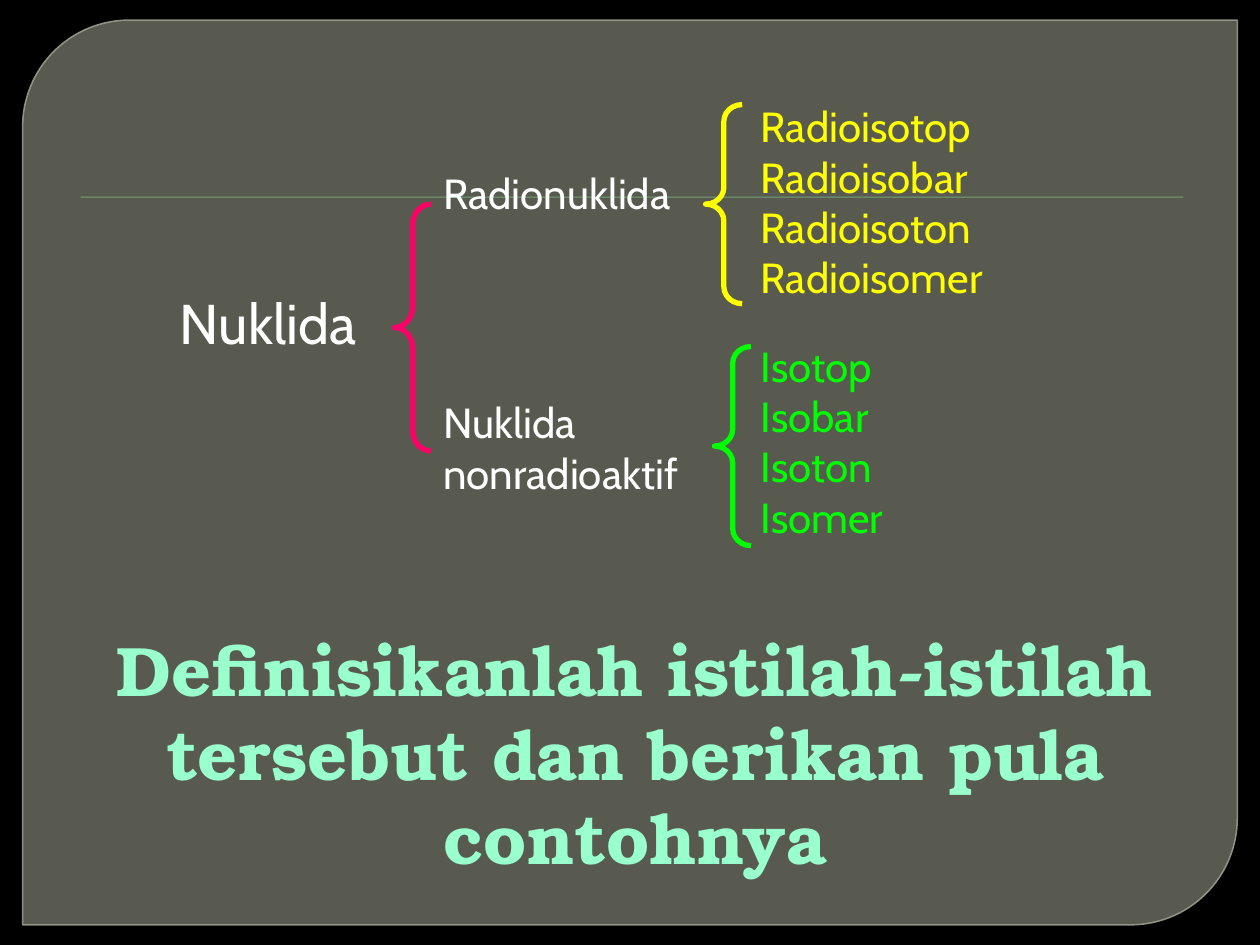
from lxml.etree import SubElement
from pptx import Presentation
from pptx.dml.color import RGBColor
from pptx.enum.shapes import MSO_SHAPE as Preset
from pptx.enum.text import MSO_ANCHOR as Anchor, MSO_AUTO_SIZE as AutoSize, PP_ALIGN as Align
from pptx.oxml.ns import qn
from pptx.util import Inches, Pt

BLACK = RGBColor(0x00, 0x00, 0x00)
WHITE = RGBColor(0xFF, 0xFF, 0xFF)
PANEL = RGBColor(0x88, 0x8B, 0x7B)
PANEL_EDGE = RGBColor(0x9D, 0xA0, 0x90)
RULE = RGBColor(0x72, 0xA3, 0x76)
PINK = RGBColor(0xFF, 0x00, 0x66)
YELLOW = RGBColor(0xFF, 0xFF, 0x00)
GREEN = RGBColor(0x00, 0xFF, 0x00)
MINT = RGBColor(0x99, 0xFF, 0xCC)

deck = Presentation()
deck.slide_width, deck.slide_height = Inches(10), Inches(7.5)
page = deck.slides.add_slide(deck.slide_layouts[5])
page.background.fill.solid()
page.background.fill.fore_color.rgb = BLACK


def share(left, top, width, height):
    """Turn percentages of the slide into left, top, width and height."""
    column, row = deck.slide_width / 100, deck.slide_height / 100
    return int(left * column), int(top * row), int(width * column), int(height * row)


def write(box, text, size=24, font="Cabin", color=WHITE, bold=False, align=Align.LEFT):
    frame = box.text_frame
    frame.word_wrap = True
    frame.auto_size = AutoSize.NONE
    frame.vertical_anchor = Anchor.TOP
    para = frame.paragraphs[0]
    para.alignment = align
    span = para.add_run()
    span.text = text
    span.font.size = Pt(size)
    span.font.name = font
    span.font.bold = bold
    span.font.color.rgb = color


# Backdrop: translucent panel and thin rule
panel = page.shapes.add_shape(Preset.ROUND_2_DIAG_RECTANGLE, *share(1.8, 2.13, 96.4, 95.73))
panel.shadow.inherit = False
panel.adjustments[0], panel.adjustments[1] = 0.118, 0
panel.fill.solid()
panel.fill.fore_color.rgb = PANEL
panel.line.color.rgb = PANEL_EDGE
panel.line.width = Pt(0.87)
fill_color, edge_color = panel.element.spPr.iter(qn("a:srgbClr"))
for color, opacity in ((fill_color, 65), (edge_color, 88)):
    SubElement(color, qn("a:alpha"), val=str(opacity * 1000))

rule = page.shapes.add_shape(Preset.RECTANGLE, *share(6.4, 20.8, 87.5, 0.13))
rule.shadow.inherit = False
rule.fill.solid()
rule.fill.fore_color.rgb = RULE
rule.line.fill.background()

# Tree of nuclide classes
labels = (
    ("Nuklida", (13.3, 29.87, 18, 12.4), 32, WHITE),
    ("Radionuklida", (34.2, 17.07, 23.3, 12.4), 24, WHITE),
    ("Nuklida nonradioaktif", (34.2, 41.33, 24.1, 16.53), 24, WHITE),
    ("Radioisotop Radioisobar Radioisoton Radioisomer", (59.4, 10, 22.3, 24.4), 24, YELLOW),
    ("Isotop Isobar Isoton Isomer", (59.4, 35.33, 16.5, 24.67), 24, GREEN),
)
for text, place, size, color in labels:
    write(page.shapes.add_textbox(*share(*place)), text, size=size, color=color)

braces = (
    ((31.3, 21.6, 2.9, 26.13), 0.56, PINK),
    ((56, 11.07, 2.9, 21.07), 0.46, YELLOW),
    ((56.7, 36.67, 2.9, 21.07), 0.46, GREEN),
)
for place, curl, color in braces:
    brace = page.shapes.add_shape(Preset.LEFT_BRACE, *share(*place))
    brace.shadow.inherit = False
    brace.adjustments[0], brace.adjustments[1] = curl, 0.5
    brace.fill.background()
    brace.line.color.rgb = color
    brace.line.width = Pt(3)

# Assignment, raised in front of the panel
title = page.shapes.title
title.left, title.top, title.width, title.height = share(5.8, 65.6, 89.2, 19.07)
write(title, "Definisikanlah istilah-istilah tersebut dan berikan pula contohnya",
      size=40, font="TeX Gyre Bonum", color=MINT, bold=True, align=Align.CENTER)
title.element.getparent().append(title.element)

deck.save("out.pptx")
